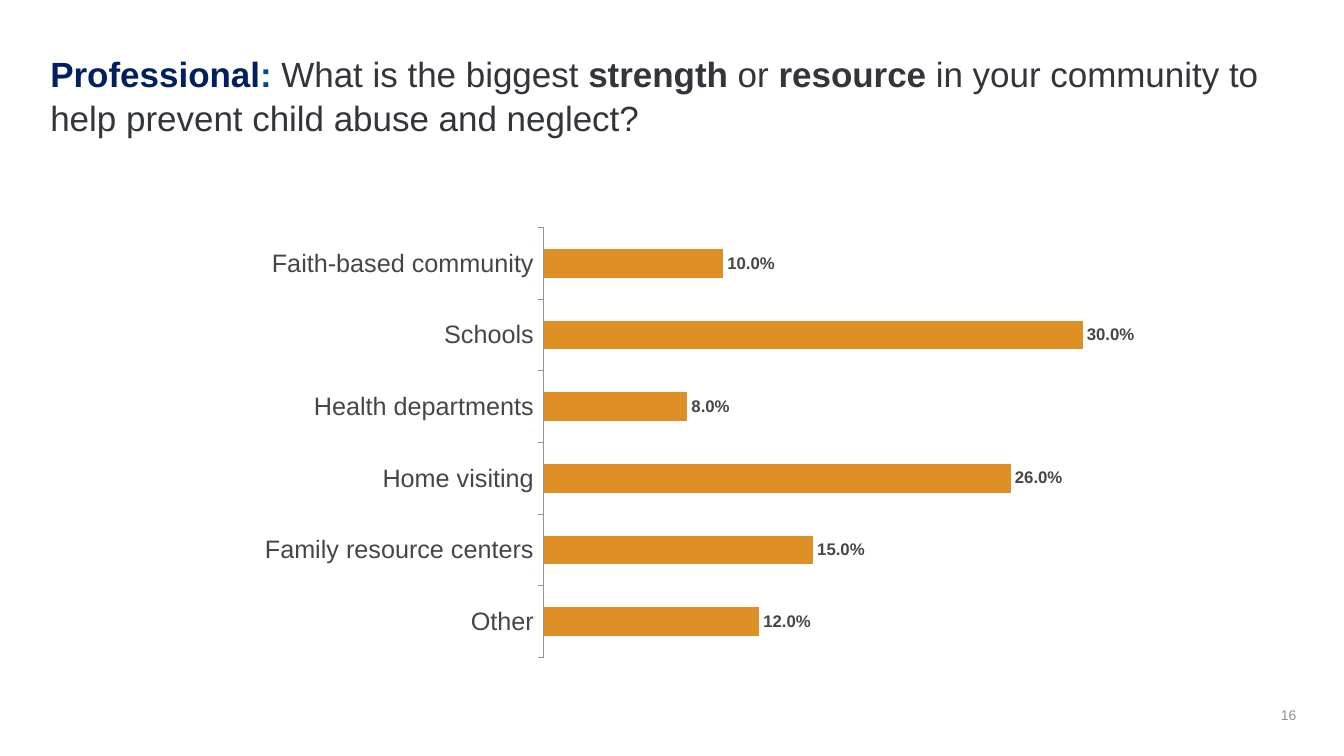
from dataclasses import dataclass

from pptx import Presentation
from pptx.chart.data import CategoryChartData
from pptx.dml.color import RGBColor
from pptx.enum.chart import XL_CHART_TYPE, XL_LABEL_POSITION, XL_TICK_MARK
from pptx.enum.text import MSO_ANCHOR, PP_ALIGN
from pptx.util import Cm, Pt

FONT = "Arial"
NAVY, BLUE, INK = "002060", "004C99", "32363A"
GREY, CHART_TEXT, ORANGE = "949494", "464646", "DE9027"


@dataclass
class Span:
    text: str
    color: str
    bold: bool = False


@dataclass
class TextBlock:
    left: float
    top: float
    width: float
    height: float
    size: float
    spans: list[Span]
    left_inset: float = 0.25
    align: PP_ALIGN = PP_ALIGN.LEFT
    anchor: MSO_ANCHOR = MSO_ANCHOR.TOP
    line_spacing: float = 1.0


TITLE = TextBlock(1.27, 1.14, 31.65, 2.34, 25, [
    Span("Professional", NAVY, True),
    Span(": ", BLUE, True),
    Span("What is the biggest ", INK),
    Span("strength", INK, True),
    Span(" or ", INK),
    Span("resource", INK, True),
    Span(" in your community to help prevent child abuse and neglect?", INK),
], left_inset=0, line_spacing=1.05)

PAGE_NUMBER = TextBlock(25.3, 17.73, 7.62, 0.56, 10, [Span("16", GREY)],
                        align=PP_ALIGN.RIGHT, anchor=MSO_ANCHOR.MIDDLE)

# Bars run from the bottom of the chart upwards
ANSWERS = {
    "Other": 0.12,
    "Family resource centers": 0.15,
    "Home visiting": 0.26,
    "Health departments": 0.08,
    "Schools": 0.3,
    "Faith-based community": 0.1,
}


def rgb(color: str) -> RGBColor:
    return RGBColor.from_string(color)


def set_font(font, size: float, color: str, bold: bool = False) -> None:
    font.name, font.size, font.bold = FONT, Pt(size), bold
    font.color.rgb = rgb(color)


def add_text(page, block: TextBlock) -> None:
    box = page.shapes.add_textbox(Cm(block.left), Cm(block.top),
                                  Cm(block.width), Cm(block.height))
    frame = box.text_frame
    frame.word_wrap = True
    frame.margin_left = Cm(block.left_inset)
    frame.vertical_anchor = block.anchor
    para = frame.paragraphs[0]
    para.alignment = block.align
    para.line_spacing = block.line_spacing
    para.font.name, para.font.size = FONT, Pt(block.size)
    for span in block.spans:
        run = para.add_run()
        run.text = span.text
        run.font.bold = span.bold
        run.font.color.rgb = rgb(span.color)


def add_answer_chart(page) -> None:
    data = CategoryChartData(number_format="0.0%")
    data.categories = list(ANSWERS)
    data.add_series("Series 1", list(ANSWERS.values()))
    chart = page.shapes.add_chart(XL_CHART_TYPE.BAR_CLUSTERED, Cm(6.2), Cm(5.51),
                                  Cm(23.83), Cm(11.28), data).chart
    chart.has_legend = False
    chart.has_title = False
    set_font(chart.font, 18, CHART_TEXT)

    # Axes
    categories = chart.category_axis
    categories.major_tick_mark = XL_TICK_MARK.OUTSIDE
    categories.has_major_gridlines = False
    categories.format.line.color.rgb = rgb(GREY)
    categories.format.line.width = Pt(0.5)
    set_font(categories.tick_labels.font, 18, CHART_TEXT)
    values = chart.value_axis
    values.minimum_scale, values.maximum_scale = 0, 0.35
    values.has_major_gridlines = False
    values.visible = False

    # Bars and their labels
    plot = chart.plots[0]
    plot.gap_width = 150
    plot.vary_by_categories = False
    bars = plot.series[0]
    bars.format.fill.solid()
    bars.format.fill.fore_color.rgb = rgb(ORANGE)
    labels = bars.data_labels
    labels.show_value = True
    labels.number_format = "0.0%"
    labels.number_format_is_linked = False
    labels.position = XL_LABEL_POSITION.OUTSIDE_END
    set_font(labels.font, 12, CHART_TEXT, bold=True)


def main() -> None:
    deck = Presentation()
    deck.slide_width, deck.slide_height = Cm(33.87), Cm(19.05)
    page = deck.slides.add_slide(deck.slide_layouts[6])
    add_text(page, TITLE)
    add_text(page, PAGE_NUMBER)
    add_answer_chart(page)
    deck.save("out.pptx")


if __name__ == "__main__":
    main()
